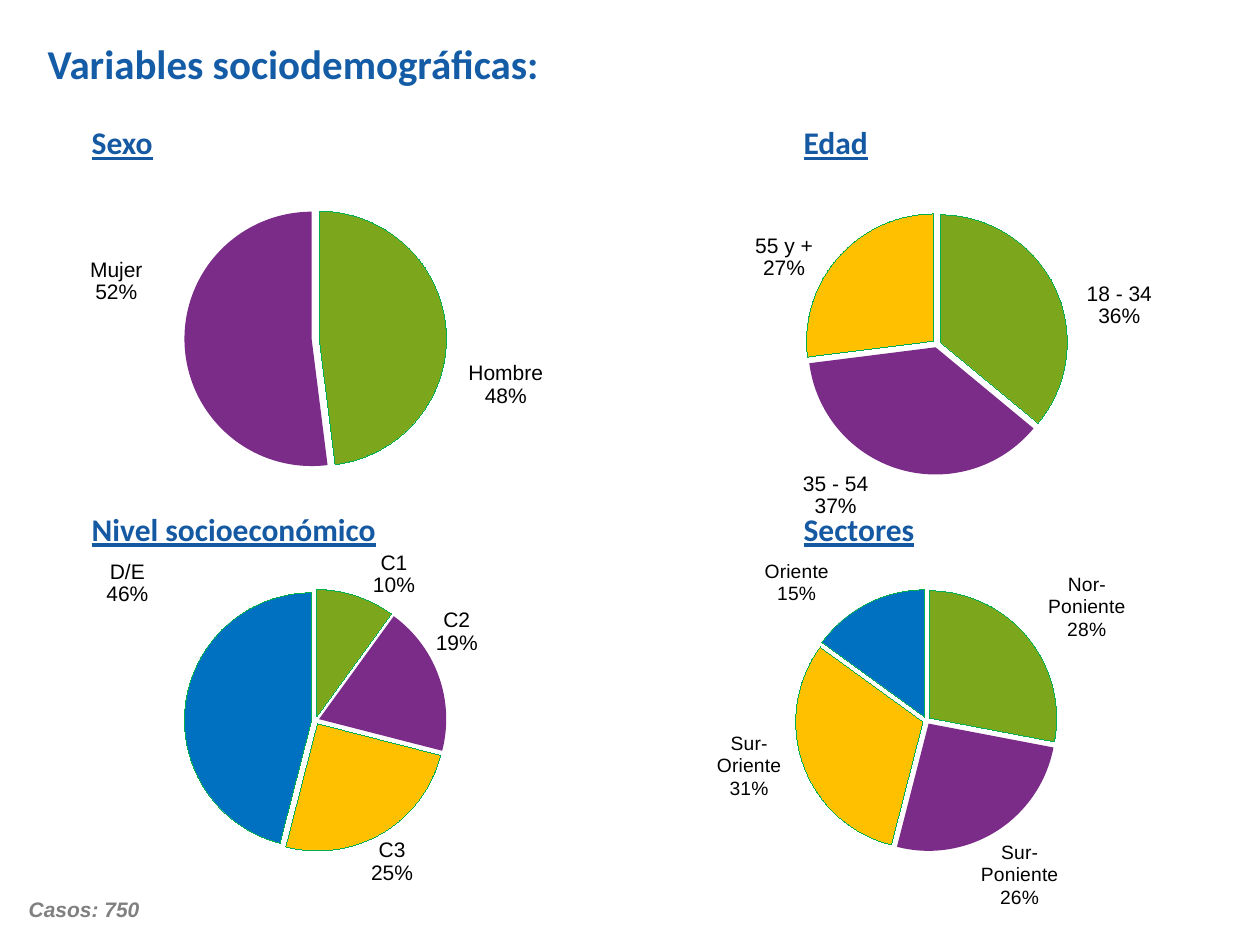
from lxml import etree
from pptx import Presentation
from pptx import util as u
from pptx.chart.data import CategoryChartData
from pptx.dml.color import RGBColor
from pptx.enum import chart as ch, text
from pptx.oxml.ns import qn

THEME = {
    "title": "155CA7", "heading": "1559A2", "note": "808080", "label": "000000",
    "outline": "00B050", "slices": ["7CA71D", "7B2C88", "FFC000", "0070C0"],
    "head_font": "Calibri", "body_font": "Arial",
    "title_size": 23.4, "heading_size": 18, "note_size": 12,
}
PURPLE = "7B2C88"
PLOT_AREA = {"x": 0.143, "y": 0.164, "w": 0.688, "h": 0.671}
CHART_SIZE = (3.93, 3.1)
EXPLOSION = 3

TITLE = ("Variables sociodemográficas:", (0.28, 0.18, 8.07, 0.64))
NOTE = ("Casos: 750", (0.13, 7.07, 1.13, 0.3))
HEADING_X, HEADING_Y = (0.63, 6.28), (0.93, 4)
PANELS = [
    {"heading": "Sexo", "cell": (0, 0), "at": (0.59, 1.14), "size": 12,
     "slices": [("Hombre", 48, (0.03, 0.14)), ("Mujer", 52, (-0.07, -0.17))]},
    {"heading": "Edad", "cell": (1, 0), "at": (5.52, 1.18), "size": 12,
     "slices": [("18 - 34", 36, (0.05, 0.11)), ("35 - 54", 37, (-0.06, -0.01)),
                ("55 y +", 27, (-0.04, 0.07))]},
    {"heading": "Nivel socioeconómico", "cell": (0, 1), "at": (0.59, 4.17), "size": 12,
     "slices": [("C1", 10, (0.03, 0.02)), ("C2", 19, (-0.02, -0.05)),
                ("C3", 25, (-0.03, 0)), ("D/E", 46, (-0.06, -0.25))]},
    {"heading": "Sectores", "cell": (1, 1), "at": (5.44, 4.17), "size": 11,
     "slices": [("Nor-Poniente", 28, (0.03, 0.02)), ("Sur-Poniente", 26, (-0.04, 0.01)),
                ("Sur-Oriente", 31, (-0.03, -0.09)), ("Oriente", 15, (-0.07, 0.02))]},
]


def rgb(name):
    return RGBColor.from_string(name)


def add_text(s, content, box, size, color, font, wrap=True, anchor=text.MSO_ANCHOR.TOP,
             italic=None, underline=None):
    tf = s.shapes.add_textbox(*map(u.Inches, box)).text_frame
    tf.word_wrap = wrap
    tf.vertical_anchor = anchor
    r = tf.paragraphs[0].add_run()
    r.text = content
    f = r.font
    f.name, f.size, f.bold, f.italic, f.underline = font, u.Pt(size), True, italic, underline
    f.color.rgb = rgb(color)


def manual_layout(values, inner=False):
    layout = etree.Element(qn("c:layout"))
    manual = etree.SubElement(layout, qn("c:manualLayout"))
    if inner:
        etree.SubElement(manual, qn("c:layoutTarget"), val="inner")
        for axis in "xy":
            etree.SubElement(manual, qn(f"c:{axis}Mode"), val="edge")
    for key, value in values.items():
        etree.SubElement(manual, qn(f"c:{key}"), val=str(value))
    return layout


def style_labels(labels, size):
    labels.font.name = THEME["body_font"]
    labels.font.size = u.Pt(size)
    labels.font.color.rgb = rgb(THEME["label"])
    labels.position = ch.XL_LABEL_POSITION.OUTSIDE_END


def show_category_percent(el):
    shown = {"showLegendKey": 0, "showVal": 0, "showCatName": 1, "showSerName": 0, "showPercent": 1}
    for tag, value in shown.items():
        el.find(qn(f"c:{tag}")).set("val", str(value))
    separator = etree.Element(qn("c:separator"))
    separator.text = "\n"
    last = el.find(qn("c:showBubbleSize"))
    if last is None:
        last = el.find(qn("c:showPercent"))
    last.addnext(separator)
    return separator


def hide_leader_lines(el, separator):
    for old in el.findall(qn("c:showLeaderLines")):
        el.remove(old)
    separator.addnext(etree.Element(qn("c:showLeaderLines"), val="0"))


def add_pie(s, panel):
    names, values, offsets = zip(*panel["slices"])
    data = CategoryChartData()
    data.categories = names
    data.add_series("Series 1", values)
    frame = s.shapes.add_chart(ch.XL_CHART_TYPE.PIE, *map(u.Inches, panel["at"] + CHART_SIZE), data)
    chart = frame.chart
    chart.has_title = chart.has_legend = False
    chart.font.name, chart.font.size = THEME["head_font"], u.Pt(18)
    chart.font.color.rgb = rgb(THEME["label"])
    plot = chart.plots[0]
    plot.vary_by_categories = True

    area = chart._chartSpace.find(".//" + qn("c:plotArea"))
    for old in area.findall(qn("c:layout")):
        area.remove(old)
    area.insert(0, manual_layout(PLOT_AREA, inner=True))

    series = plot.series[0]
    series.format.line.color.rgb = rgb(THEME["outline"])
    series.format.line.width = u.Pt(0.75)
    explosion = etree.Element(qn("c:explosion"), val=str(EXPLOSION))
    series._element.find(qn("c:spPr")).addnext(explosion)
    labels = series.data_labels
    style_labels(labels, panel["size"])
    labels.number_format, labels.number_format_is_linked = "0%", False
    hide_leader_lines(labels._element, show_category_percent(labels._element))

    for i, color in enumerate(THEME["slices"][:len(names)]):
        point = series.points[i]
        point.format.fill.solid()
        point.format.fill.fore_color.rgb = rgb(color)
        if color == PURPLE:
            point.format.line.fill.background()
        else:
            point.format.line.color.rgb = rgb(THEME["outline"])
        style_labels(point.data_label, panel["size"])
    for label, offset in zip(labels._element.findall(qn("c:dLbl")), offsets):
        label.insert(1, manual_layout(dict(zip("xy", offset))))
        show_category_percent(label)


def main():
    prs = Presentation()
    prs.slide_width, prs.slide_height = u.Inches(10), u.Inches(7.5)
    s = prs.slides.add_slide(prs.slide_layouts[6])
    add_text(s, *TITLE, THEME["title_size"], THEME["title"], THEME["head_font"],
             anchor=text.MSO_ANCHOR.MIDDLE)
    add_text(s, *NOTE, THEME["note_size"], THEME["note"], THEME["body_font"],
             wrap=False, italic=True)
    for panel in PANELS:
        add_pie(s, panel)
        col, row = panel["cell"]
        add_text(s, panel["heading"], (HEADING_X[col], HEADING_Y[row], 3.06, 0.4),
                 THEME["heading_size"], THEME["heading"], THEME["head_font"], underline=True)
    prs.save("out.pptx")


if __name__ == "__main__":
    main()
